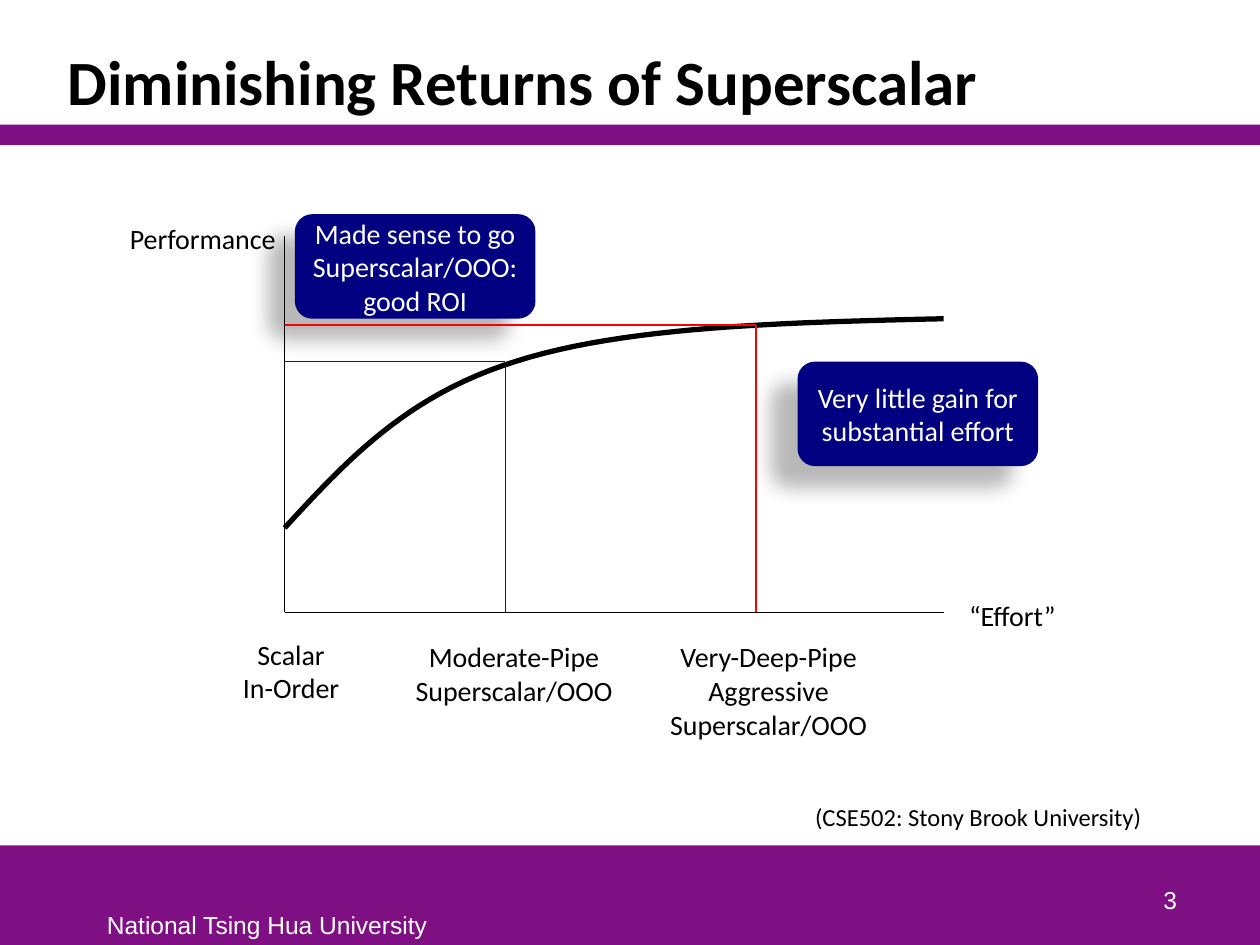
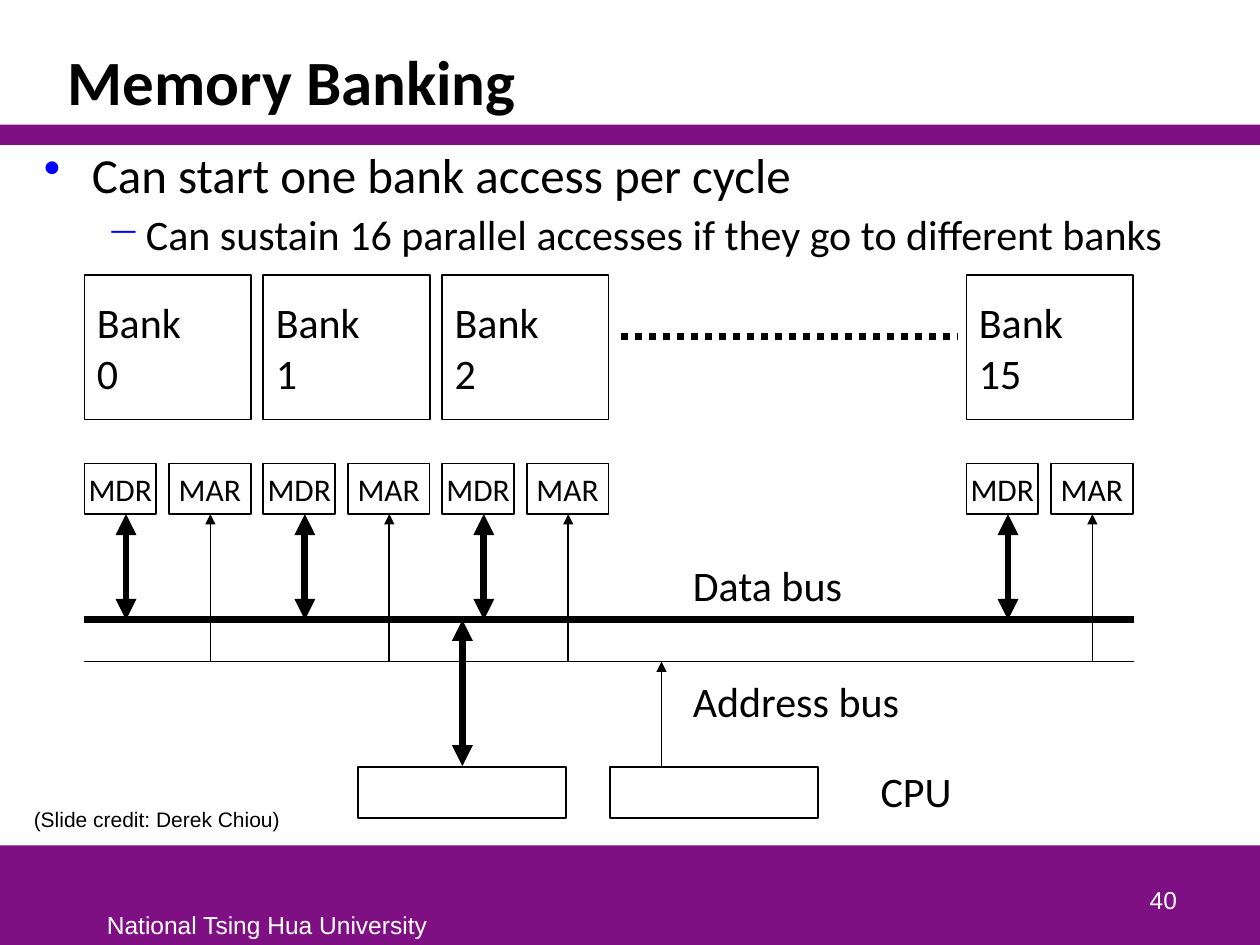
from dataclasses import dataclass

from lxml.etree import SubElement
from pptx import Presentation
from pptx.dml.color import RGBColor
from pptx.enum.dml import MSO_LINE
from pptx.enum.shapes import MSO_CONNECTOR, MSO_SHAPE
from pptx.enum.text import MSO_ANCHOR, MSO_AUTO_SIZE, PP_ALIGN
from pptx.oxml.ns import qn
from pptx.shapes.autoshape import Shape
from pptx.slide import Slide
from pptx.util import Emu, Pt

EMU_PER_PX = 9144  # 100 px to the inch


@dataclass(frozen=True)
class Theme:
    purple: str = "7F1084"
    navy: str = "000080"
    blue: str = "0000FF"
    red: str = "FF0000"
    black: str = "000000"
    white: str = "FFFFFF"
    main_font: str = "Calibri"
    footer_font: str = "Arial"
    title: int = 36
    bullet: int = 28
    diagram: int = 24
    register: int = 18
    label: int = 16
    footer: int = 14
    credit: int = 12
    thin: float = 0.75
    normal: float = 1
    curve: float = 3
    thick: float = 4


THEME = Theme()


@dataclass(frozen=True)
class Box:
    left: int
    top: int
    width: int
    height: int

    def emu(self) -> tuple[Emu, ...]:
        return tuple(px(n) for n in (self.left, self.top, self.width, self.height))


@dataclass(frozen=True)
class TextStyle:
    size: int
    color: str = THEME.black
    font: str = THEME.main_font
    bold: bool = False
    align: PP_ALIGN = PP_ALIGN.LEFT


@dataclass(frozen=True)
class Bullet:
    text: str
    mark: str
    size: int
    level: int
    margin: int
    hang: int


@dataclass(frozen=True)
class DesignPoint:
    effort: int
    performance: int
    color: str
    width: float
    verdict: str
    verdict_box: Box


def px(n: float) -> Emu:
    return Emu(round(n * EMU_PER_PX))


def rgb(code: str) -> RGBColor:
    return RGBColor.from_string(code)


# Drawing tools
def style_paragraph(paragraph, style: TextStyle) -> None:
    paragraph.alignment = style.align
    font = paragraph.font
    font.name, font.size, font.bold = style.font, Pt(style.size), style.bold
    font.color.rgb = rgb(style.color)


def write(shape: Shape, text: str, style: TextStyle, anchor=MSO_ANCHOR.MIDDLE,
          wrap: bool = False) -> None:
    frame = shape.text_frame
    frame.word_wrap = wrap
    frame.vertical_anchor = anchor
    frame.text = text
    for paragraph in frame.paragraphs:
        style_paragraph(paragraph, style)


def add_text(slide: Slide, box: Box, text: str, style: TextStyle,
             anchor=MSO_ANCHOR.TOP, wrap: bool = False) -> Shape:
    shape = slide.shapes.add_textbox(*box.emu())
    write(shape, text, style, anchor, wrap)
    if not wrap:
        shape.text_frame.auto_size = MSO_AUTO_SIZE.SHAPE_TO_FIT_TEXT
    return shape


def add_filled(slide: Slide, box: Box, color: str, kind=MSO_SHAPE.RECTANGLE) -> Shape:
    shape = slide.shapes.add_shape(kind, *box.emu())
    shape.shadow.inherit = False
    shape.fill.solid()
    shape.fill.fore_color.rgb = rgb(color)
    shape.line.fill.background()
    return shape


def outline(shape: Shape, width: float) -> None:
    shape.shadow.inherit = False
    shape.fill.background()
    shape.line.color.rgb = rgb(THEME.black)
    shape.line.width = Pt(width)


def add_frame(slide: Slide, box: Box) -> Shape:
    shape = slide.shapes.add_shape(MSO_SHAPE.RECTANGLE, *box.emu())
    outline(shape, THEME.normal)
    return shape


def add_line(slide: Slide, start: tuple[int, int], end: tuple[int, int], width: float,
             color: str = THEME.black, arrows: tuple[str, ...] = (), dash=None) -> None:
    """Arrows holds "headEnd" for the start and "tailEnd" for the end."""
    line = slide.shapes.add_connector(
        MSO_CONNECTOR.STRAIGHT, *(px(n) for n in (*start, *end)))
    line.line.color.rgb = rgb(color)
    line.line.width = Pt(width)
    if dash is not None:
        line.line.dash_style = dash
    properties = line._element.spPr
    for arrow in arrows:
        SubElement(properties.find(qn("a:ln")), qn(f"a:{arrow}"), type="triangle")
    SubElement(properties, qn("a:effectLst"))


def add_callout(slide: Slide, box: Box, text: str) -> None:
    callout = add_filled(slide, box, THEME.navy, MSO_SHAPE.ROUNDED_RECTANGLE)
    effects = callout._element.spPr.find(qn("a:effectLst"))
    shadow = SubElement(effects, qn("a:outerShdw"), blurRad=str(Pt(11.8)),
                        dist=str(Pt(19.7)), dir=str(141 * 60000), rotWithShape="0")
    tint = SubElement(shadow, qn("a:srgbClr"), val=THEME.black)
    SubElement(tint, qn("a:alpha"), val="28000")
    write(callout, text, TextStyle(THEME.label, THEME.white, align=PP_ALIGN.CENTER))


def add_bullets(slide: Slide, box: Box, bullets: list[Bullet]) -> None:
    body = add_text(slide, box, "\n".join(b.text for b in bullets),
                    TextStyle(THEME.bullet), wrap=True)
    for index, (paragraph, bullet) in enumerate(zip(body.text_frame.paragraphs, bullets)):
        paragraph.level = bullet.level
        properties = paragraph._p.get_or_add_pPr()
        properties.set("marL", str(px(bullet.margin)))
        properties.set("indent", str(-px(bullet.hang)))
        tint = properties.makeelement(qn("a:buClr"))
        SubElement(tint, qn("a:srgbClr"), val=THEME.blue)
        mark = properties.makeelement(qn("a:buChar"), char=bullet.mark)
        defaults = properties.find(qn("a:defRPr"))
        defaults.addprevious(tint)
        defaults.addprevious(mark)
        if index:
            paragraph.space_before = Pt(3)
        paragraph.font.size = Pt(bullet.size)


def bezier(p0, p1, p2, p3, steps: int = 24) -> list[tuple[Emu, Emu]]:
    def at(t: float, axis: int) -> Emu:
        u = 1 - t
        return px(u**3 * p0[axis] + 3 * u * u * t * p1[axis]
                  + 3 * u * t * t * p2[axis] + t**3 * p3[axis])
    return [(at(i / steps, 0), at(i / steps, 1)) for i in range(1, steps + 1)]


# Shared bands, title and footer
def start_slide(deck, title: str, number: int) -> Slide:
    slide = deck.slides.add_slide(deck.slide_layouts[6])
    for band in (Box(0, 671, 1000, 79), Box(0, 99, 1000, 16)):
        add_filled(slide, band, THEME.purple)
    footer = TextStyle(THEME.footer, THEME.white, THEME.footer_font)
    add_text(slide, Box(75, 717, 276, 33), "National Tsing Hua University", footer)
    heading = add_text(slide, Box(44, 25, 897, 74), title,
                       TextStyle(THEME.title, bold=True), MSO_ANCHOR.BOTTOM, wrap=True)
    heading.text_frame.paragraphs[0].line_spacing = 0.85
    add_text(slide, Box(736, 681, 208, 50), str(number),
             TextStyle(THEME.footer, THEME.white, THEME.footer_font, align=PP_ALIGN.RIGHT),
             MSO_ANCHOR.BOTTOM, wrap=True)
    return slide


def build_returns(deck) -> None:
    slide = start_slide(deck, "Diminishing Returns of Superscalar", 3)
    origin_x, origin_y, effort_end = 226, 486, 749

    # Axes and their labels
    add_line(slide, (origin_x, origin_y), (origin_x, 187), THEME.thin)
    add_line(slide, (origin_x, origin_y), (effort_end, origin_y), THEME.thin)
    label = TextStyle(THEME.label, align=PP_ALIGN.CENTER)
    for box, text in (
        (Box(758, 470, 91, 37), "“Effort”"),
        (Box(92, 171, 138, 37), "Performance"),
        (Box(182, 501, 98, 64), "Scalar\nIn-Order"),
        (Box(319, 503, 178, 64), "Moderate-Pipe\nSuperscalar/OOO"),
        (Box(521, 503, 178, 91), "Very-Deep-Pipe\nAggressive\nSuperscalar/OOO"),
    ):
        add_text(slide, box, text, label)

    # Performance curve
    start, knee, end = (origin_x, 419), (409, 287), (effort_end, 253)
    points = (bezier(start, (274, 367), (322, 314), knee)
              + bezier(knee, (496, 259), (622, 256), end))
    builder = slide.shapes.build_freeform(px(start[0]), px(start[1]))
    builder.add_line_segments(points, close=False)
    outline(builder.convert_to_shape(), THEME.curve)

    # Design points with their verdicts
    for point in (
        DesignPoint(401, 287, THEME.blue, THEME.thin,
                    "Made sense to go\nSuperscalar/OOO:\ngood ROI", Box(234, 170, 191, 83)),
        DesignPoint(600, 258, THEME.red, THEME.normal,
                    "Very little gain for\nsubstantial effort", Box(633, 287, 191, 83)),
    ):
        corner = (point.effort, point.performance)
        add_line(slide, (point.effort, origin_y), corner, point.width, point.color)
        add_line(slide, corner, (origin_x, point.performance), point.width, point.color)
        add_callout(slide, point.verdict_box, point.verdict)

    add_text(slide, Box(637, 632, 282, 34), "(CSE502: Stony Brook University)",
             TextStyle(THEME.footer))


def build_banking(deck) -> None:
    slide = start_slide(deck, "Memory Banking", 40)
    add_bullets(slide, Box(25, 110, 975, 567), [
        Bullet("Can start one bank access per cycle", "•", THEME.bullet, 0, 38, 38),
        Bullet("Can sustain 16 parallel accesses if they go to different banks", "−",
               THEME.diagram, 1, 81, 31),
    ])
    bus_left, bus_right, data_bus, address_bus = 67, 900, 492, 525
    register_top, register_height, cpu_top = 368, 40, 609
    register_bottom = register_top + register_height
    both_ends, up = ("headEnd", "tailEnd"), ("headEnd",)
    diagram = TextStyle(THEME.diagram)
    register = TextStyle(THEME.register, align=PP_ALIGN.CENTER)

    # Banks, their registers and bus links
    bank_lefts = {number: bus_left + 142 * number for number in range(3)} | {15: 767}
    for number, left in bank_lefts.items():
        bank = add_frame(slide, Box(left, 218, 132, 115))
        write(bank, f"Bank\n{number}", diagram, wrap=True)
        for name, offset, width in (("MDR", 0, 57), ("MAR", 67, 65)):
            cell = add_frame(slide, Box(left + offset, register_top, width, register_height))
            write(cell, name, register)
            frame = cell.text_frame
            frame.margin_left = frame.margin_right = px(4)
            frame.margin_top = frame.margin_bottom = px(4)
        add_line(slide, (left + 33, register_bottom), (left + 33, data_bus),
                 THEME.thick, arrows=both_ends)
        add_line(slide, (left + 100, register_bottom), (left + 100, address_bus),
                 THEME.normal, arrows=up)
    add_line(slide, (493, 267), (760, 267), THEME.thick, dash=MSO_LINE.ROUND_DOT)

    # Buses
    for bus, width in ((data_bus, THEME.thick), (address_bus, THEME.normal)):
        add_line(slide, (bus_left, bus), (bus_right, bus), width)

    # CPU side
    for left in (284, 484):
        add_frame(slide, Box(left, cpu_top, 165, register_height))
    add_line(slide, (367, data_bus), (367, cpu_top - 1), THEME.thick, arrows=both_ends)
    add_line(slide, (525, address_bus), (525, cpu_top - 1), THEME.normal, arrows=up)

    # Labels
    for box, text in (
        (Box(540, 439, 140, 50), "Data bus"),
        (Box(540, 531, 185, 50), "Address bus"),
        (Box(689, 603, 77, 50), "CPU"),
    ):
        add_text(slide, box, text, diagram)
    add_text(slide, Box(17, 635, 217, 30), "(Slide credit: Derek Chiou)",
             TextStyle(THEME.credit, font=THEME.footer_font))


def main() -> None:
    deck = Presentation()
    deck.slide_width, deck.slide_height = px(1000), px(750)
    build_returns(deck)
    build_banking(deck)
    deck.save("out.pptx")


if __name__ == "__main__":
    main()
